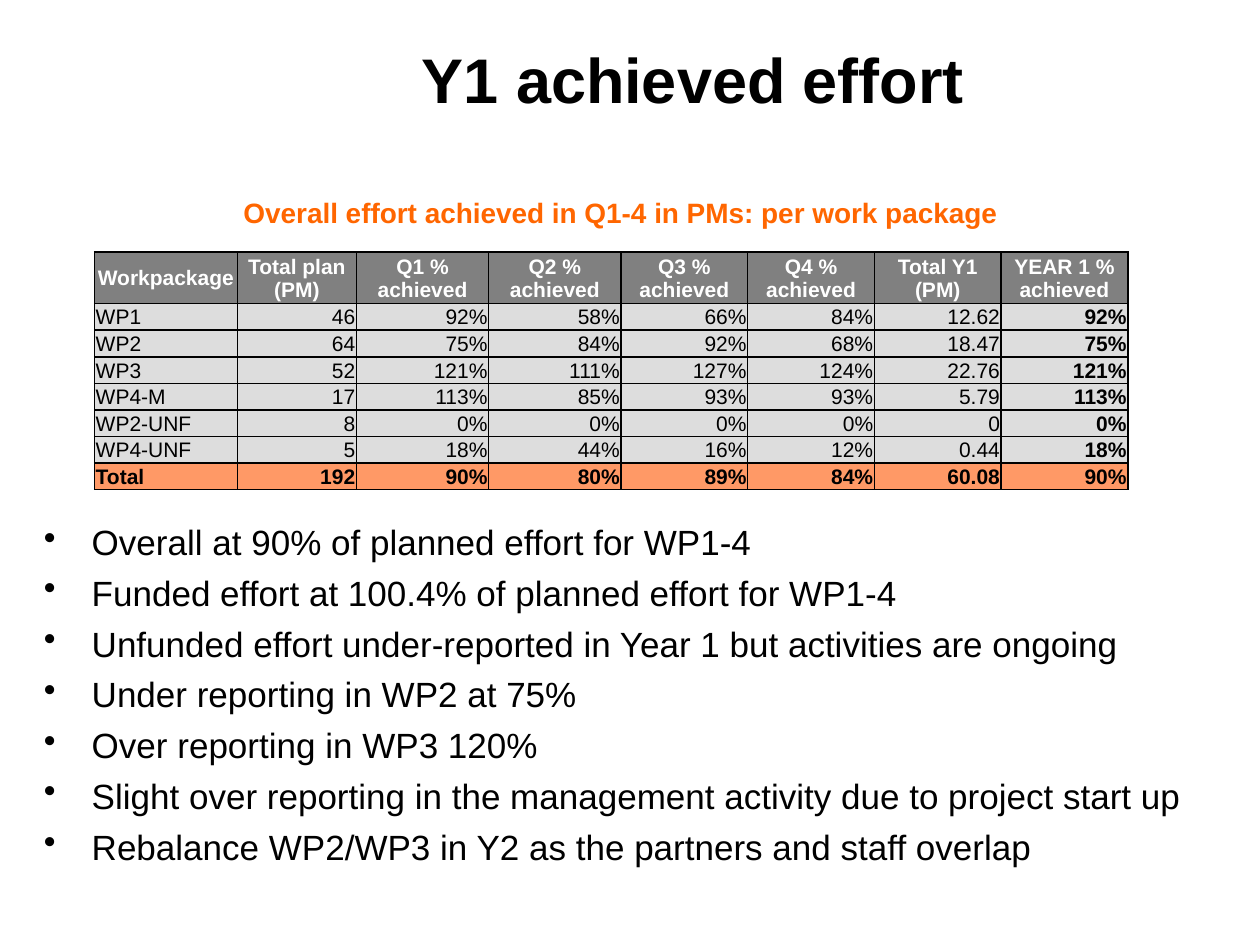
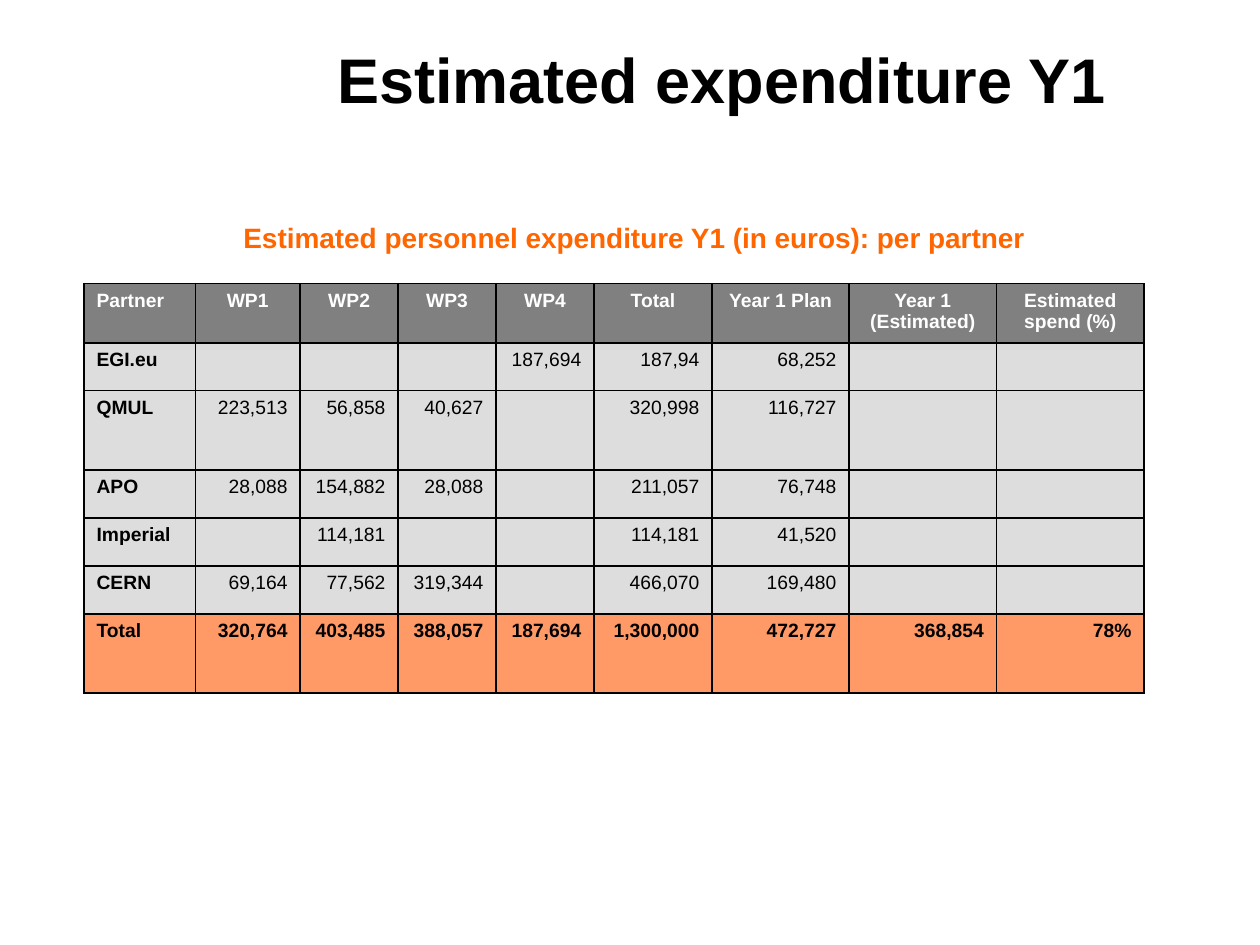
from lxml.etree import SubElement
from pptx import Presentation
from pptx.dml.color import RGBColor
from pptx.enum.shapes import MSO_SHAPE
from pptx.enum.text import MSO_ANCHOR, PP_ALIGN
from pptx.oxml import parse_xml
from pptx.oxml.ns import nsdecls, qn
from pptx.util import Inches, Pt

GRID_COLUMNS, GRID_ROWS = 120, 90
BLACK, WHITE, ORANGE = "000000", "FFFFFF", "FF6600"
HEADER_FILL, BODY_FILL, TOTAL_FILL = "808080", "DDDDDD", "FF9966"


def color(hex_string):
    return RGBColor.from_string(hex_string)


class ReportDeck:
    """Holds the report style and the current slide, laid out on a 120 by 90 grid."""

    font_name = "Arial"

    def __init__(self):
        self.presentation = Presentation()
        self.presentation.slide_width = Inches(10)
        self.presentation.slide_height = Inches(7.5)
        self.slide = None

    def across(self, columns):
        return round(self.presentation.slide_width * columns / GRID_COLUMNS)

    def down(self, rows):
        return round(self.presentation.slide_height * rows / GRID_ROWS)

    def place(self, left, top, width, height):
        return self.across(left), self.down(top), self.across(width), self.down(height)

    def new_slide(self):
        self.slide = self.presentation.slides.add_slide(self.presentation.slide_layouts[6])

    def style(self, paragraph, size, hex_string, bold=False, alignment=PP_ALIGN.LEFT):
        paragraph.alignment = alignment
        font = paragraph.font
        font.name, font.size, font.bold = self.font_name, Pt(size), bold
        font.color.rgb = color(hex_string)

    def text(self, text, box, size, hex_string, alignment=PP_ALIGN.LEFT, anchor=MSO_ANCHOR.TOP):
        frame = self.slide.shapes.add_textbox(*self.place(*box)).text_frame
        frame.word_wrap = True
        frame.vertical_anchor = anchor
        frame.text = text
        self.style(frame.paragraphs[0], size, hex_string, True, alignment)

    def title(self, text, left=12):
        self.text(text, (left, 0, 108, 15), 36, BLACK, PP_ALIGN.CENTER, MSO_ANCHOR.MIDDLE)

    def caption(self, text, top, width):
        self.text(text, (22, top, width, 4.4), 16, ORANGE)

    def bullets(self, lines, box):
        shape = self.slide.shapes.add_shape(MSO_SHAPE.RECTANGLE, *self.place(*box))
        shape.shadow.inherit = False
        shape.fill.solid()
        shape.fill.fore_color.rgb = color(WHITE)
        shape.line.fill.background()
        frame = shape.text_frame
        frame.word_wrap = True
        frame.vertical_anchor = MSO_ANCHOR.TOP
        frame.text = "\n".join(lines)
        for index, paragraph in enumerate(frame.paragraphs):
            if index:
                paragraph.space_before = Pt(5)
            properties = paragraph._p.get_or_add_pPr()
            properties.set("marL", str(Inches(0.38)))
            properties.set("indent", str(-Inches(0.38)))
            SubElement(properties, qn("a:buChar")).set("char", "•")
            self.style(paragraph, 20, BLACK)

    def outline(self, cell):
        properties = cell._tc.get_or_add_tcPr()
        for side in "LRTB":
            properties.append(parse_xml(
                f'<a:ln{side} {nsdecls("a")} w="{Pt(1)}"><a:solidFill>'
                f'<a:srgbClr val="{BLACK}"/></a:solidFill></a:ln{side}>'))

    def table(self, records, corner, widths, heights, size, bold_column,
              margins=(0.1, 0.05), anchor=MSO_ANCHOR.TOP, first_heading=PP_ALIGN.LEFT):
        box = (*corner, sum(widths), sum(heights))
        table = self.slide.shapes.add_table(
            len(heights), len(widths), *self.place(*box)).table
        table.first_row = table.horz_banding = False
        for column, width in zip(table.columns, widths):
            column.width = self.across(width)
        for row, height in zip(table.rows, heights):
            row.height = self.down(height)
        last_row = len(records) - 1
        for row_index, record in enumerate(records):
            is_header, is_total = row_index == 0, row_index == last_row
            fill = HEADER_FILL if is_header else TOTAL_FILL if is_total else BODY_FILL
            for column_index, value in enumerate(record):
                cell = table.cell(row_index, column_index)
                cell.margin_left = cell.margin_right = Inches(margins[0])
                cell.margin_top, cell.margin_bottom = Inches(margins[1]), 0
                cell.vertical_anchor = anchor
                self.outline(cell)
                cell.fill.solid()
                cell.fill.fore_color.rgb = color(fill)
                cell.text = value
                if is_header:
                    alignment = PP_ALIGN.CENTER if column_index else first_heading
                else:
                    alignment = PP_ALIGN.RIGHT if column_index else PP_ALIGN.LEFT
                bold = is_header or is_total or column_index == bold_column
                self.style(cell.text_frame.paragraphs[0], size,
                           WHITE if is_header else BLACK, bold, alignment)


def add_effort_slide(deck):
    deck.new_slide()
    deck.title("Y1 achieved effort")
    deck.caption("Overall effort achieved in Q1-4 in PMs: per work package", 18, 75)
    quarters = [f"Q{number} % achieved" for number in range(1, 5)]
    effort = [
        ["Workpackage", "Total plan (PM)", *quarters, "Total Y1 (PM)", "YEAR 1 % achieved"],
        ["WP1", "46", "92%", "58%", "66%", "84%", "12.62", "92%"],
        ["WP2", "64", "75%", "84%", "92%", "68%", "18.47", "75%"],
        ["WP3", "52", "121%", "111%", "127%", "124%", "22.76", "121%"],
        ["WP4-M", "17", "113%", "85%", "93%", "93%", "5.79", "113%"],
        ["WP2-UNF", "8", "0%", "0%", "0%", "0%", "0", "0%"],
        ["WP4-UNF", "5", "18%", "44%", "16%", "12%", "0.44", "18%"],
        ["Total", "192", "90%", "80%", "89%", "84%", "60.08", "90%"],
    ]
    deck.table(effort, (9, 24), [13.6, 11.35] + [12.6] * 2 + [12.07] * 4,
               [4.9] + [2.53] * 7, 12, 7, (0.01, 0.01),
               MSO_ANCHOR.MIDDLE, PP_ALIGN.CENTER)
    deck.bullets([
        "Overall at 90% of planned effort for WP1-4",
        "Funded effort at 100.4% of planned effort for WP1-4",
        "Unfunded effort under-reported in Year 1 but activities are ongoing",
        "Under reporting in WP2 at 75%",
        "Over reporting in WP3 120%",
        "Slight over reporting in the management activity due to project start up",
        "Rebalance WP2/WP3 in Y2 as the partners and staff overlap",
    ], (3, 49, 114, 35))


def add_expenditure_slide(deck):
    deck.new_slide()
    expenditure = [
        ["Partner", "WP1", "WP2", "WP3", "WP4", "Total", "Year 1 Plan",
         "Year 1 (Estimated)", "Estimated spend (%)"],
        ["EGI.eu", "", "", "", "187,694", "187,94", "68,252", "", ""],
        ["QMUL", "223,513", "56,858", "40,627", "", "320,998", "116,727", "", ""],
        ["APO", "28,088", "154,882", "28,088", "", "211,057", "76,748", "", ""],
        ["Imperial", "", "114,181", "", "", "114,181", "41,520", "", ""],
        ["CERN", "69,164", "77,562", "319,344", "", "466,070", "169,480", "", ""],
        ["Total", "320,764", "403,485", "388,057", "187,694", "1,300,000", "472,727",
         "368,854", "78%"],
    ]
    deck.table(expenditure, (8, 27), [10.6, 10] + [9.33] * 3 + [11.25, 13.05, 14.05, 14.05],
               [5.65, 4.57, 7.55] + [4.57] * 3 + [7.55], 11, 0)
    deck.caption("Estimated personnel expenditure Y1 (in euros): per partner", 20.4, 80)
    deck.title("Estimated expenditure Y1", 14.75)


def main():
    deck = ReportDeck()
    add_effort_slide(deck)
    add_expenditure_slide(deck)
    deck.presentation.save("out.pptx")


if __name__ == "__main__":
    main()
